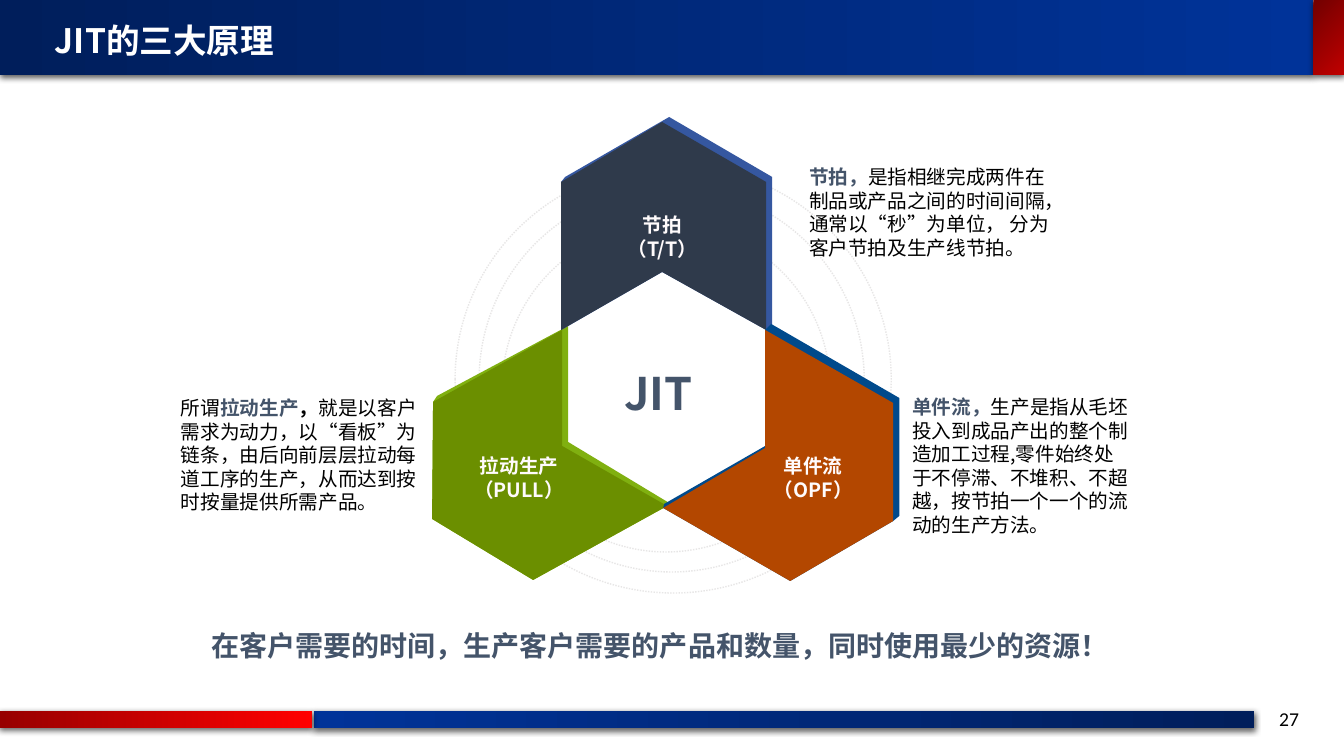
"""Build the slide on the three principles of JIT."""
from lxml import etree
from pptx import Presentation
from pptx import util as u
from pptx.dml.color import RGBColor
from pptx.enum import dml, shapes, text
from pptx.oxml.ns import qn

PX = 914400 / 100.8
SANS = "Noto Sans CJK SC"
WHITE = RGBColor(0xFF, 0xFB, 0xFC)
PURE = RGBColor(0xFF, 0xFF, 0xFF)
BLACK = RGBColor(0, 0, 0)
SLATE = RGBColor(0x44, 0x54, 0x6A)
GREY = RGBColor(0xE7, 0xE6, 0xE6)
NAVY = RGBColor(0x00, 0x1E, 0x5B)
BLUE = RGBColor(0x00, 0x33, 0x99)
MAROON = RGBColor(0x97, 0, 0)
RED = RGBColor(0xFF, 0, 0)
WINE = RGBColor(0x72, 0, 0)
BRICK = RGBColor(0xC0, 0, 0)
INK = RGBColor(0x2F, 0x3A, 0x4B)
STEEL = RGBColor(0x35, 0x57, 0xA0)
OLIVE = RGBColor(0x6B, 0x8F, 0)
LIME = RGBColor(0x80, 0xB0, 0x10)
RUST = RGBColor(0xB3, 0x47, 0)
SEA = RGBColor(0, 0x4A, 0x8C)

BARS = [
    ((314, 711, 940, 17), BLUE, NAVY, 0),
    ((0, 711, 312, 17), MAROON, RED, 0),
    ((0, 0, 1313, 75), NAVY, BLUE, 0),
    ((1313, 0, 31, 75), WINE, BRICK, 315),
]
RINGS = [(455, 165, 436, 428), (479, 187, 385, 385), (502, 224, 328, 328)]
BLADES = [
    (LIME, [(433, 402), (437, 396), (568, 326), (568, 442), (669, 503),
            (667, 506), (533, 580), (432, 519)]),
    (OLIVE, [(433, 402), (562, 330), (562, 446), (667, 506), (533, 580), (432, 519)]),
    (STEEL, [(561, 182), (565, 177), (669, 117), (772, 177), (772, 325),
             (766, 330), (662, 272), (561, 330)]),
    (INK, [(561, 182), (662, 122), (766, 182), (766, 330), (662, 272), (561, 330)]),
    (SEA, [(765, 330), (771, 324), (899, 398), (899, 516), (893, 521),
           (790, 581), (663, 508), (664, 504), (765, 446)]),
    (RUST, [(765, 330), (893, 403), (893, 521), (790, 581), (663, 508), (765, 448)]),
]
LABELS = [
    ((550, 208, 225, 57), ["节拍", "（T/T）"]),
    ((455, 449, 128, 57), ["拉动生产", "（PULL）"]),
    ((749, 449, 128, 57), ["单件流", "（OPF）"]),
]
NOTES = [
    ((902, 390, 238, 152), [
        ("单件流，", SLATE, True),
        ("生产是指从毛坯投入到成品产出的整个制造加工过程,零件始终处于不停滞、"
         "不堆积、不超越，按节拍一个一个的流动的生产方法。", BLACK, False)]),
    ((799, 160, 270, 105), [
        ("节拍，", SLATE, True),
        ("是指相继完成两件在制品或产品之间的时间间隔，通常以“秒”为单位， "
         "分为客户节拍及生产线节拍。", BLACK, False)]),
    ((171, 391, 270, 129), [
        ("所谓", BLACK, False), ("拉动生产", SLATE, True), ("，", BLACK, True),
        ("就是以客户需求为动力，以“看板”为链条，由后向前层层拉动每道工序的生产，"
         "从而达到按时按量提供所需产品。", BLACK, False)]),
]
HEADS = [
    ((45, 15, 596, 50), "JIT的三大原理", 24, PURE, False),
    ((556, 361, 205, 64), "JIT", 32, SLATE, True),
    ((196, 624, 928, 38), "在客户需要的时间，生产客户需要的产品和数量，同时使用最少的资源！",
     20, SLATE, True),
]

deck = Presentation()
deck.slide_width, deck.slide_height = u.Inches(13.33), u.Inches(7.5)
slide = deck.slides.add_slide(deck.slide_layouts[6])
tree = slide.shapes


def emu(box):
    return [round(v * PX) for v in box]


def shade(shape):
    shape.shadow.inherit = False
    glow = etree.SubElement(shape._element.spPr.find(qn("a:effectLst")), qn("a:outerShdw"),
                            blurRad="57150", dist="19050", dir="5400000", rotWithShape="0")
    tint = etree.SubElement(glow, qn("a:srgbClr"), val="000000")
    etree.SubElement(tint, qn("a:alpha"), val="63000")


def write(box, paras, size, mid=False, face=SANS):
    frame = tree.add_textbox(*emu(box)).text_frame
    frame.word_wrap = True
    for i, runs in enumerate(paras):
        para = frame.add_paragraph() if i else frame.paragraphs[0]
        para.alignment = text.PP_ALIGN.CENTER if mid else text.PP_ALIGN.LEFT
        para.line_spacing = u.Pt(size * 1.2)
        for words, color, bold in runs:
            run = para.add_run()
            run.text = words
            run.font.color.rgb = color
            for key, val in {"size": u.Pt(size), "bold": bold, "name": face}.items():
                setattr(run.font, key, val)
            etree.SubElement(run._r.get_or_add_rPr(), qn("a:ea"), typeface=face)


for box, start, end, angle in BARS:
    bar = tree.add_shape(shapes.MSO_SHAPE.RECTANGLE, *emu(box))
    bar.line.fill.background()
    bar.fill.gradient()
    bar.fill.gradient_angle = angle
    for stop, color in zip(bar.fill.gradient_stops, (start, end)):
        stop.color.rgb = color
    shade(bar)

for box in RINGS:
    ring = tree.add_shape(shapes.MSO_SHAPE.OVAL, *emu(box))
    ring.shadow.inherit = False
    ring.fill.background()
    ring.line.color.rgb = GREY
    ring.line.width = u.Pt(1)
    ring.line.dash_style = dml.MSO_LINE.ROUND_DOT

for color, points in BLADES:
    pen = tree.build_freeform(*points[0], scale=PX)
    pen.add_line_segments(points[1:], close=True)
    blade = pen.convert_to_shape()
    blade.shadow.inherit = False
    blade.fill.solid()
    blade.fill.fore_color.rgb = color
    blade.line.fill.background()

for box, lines in LABELS:
    write(box, [[(line, WHITE, True)] for line in lines], 14, True)
for box, runs in NOTES:
    write(box, [runs], 14)
for box, words, size, color, mid in HEADS:
    write(box, [[(words, color, True)]], size, mid)
write((1269, 702, 60, 34), [[("27", BLACK, False)]], 14, face="Calibri")

deck.save("out.pptx")
